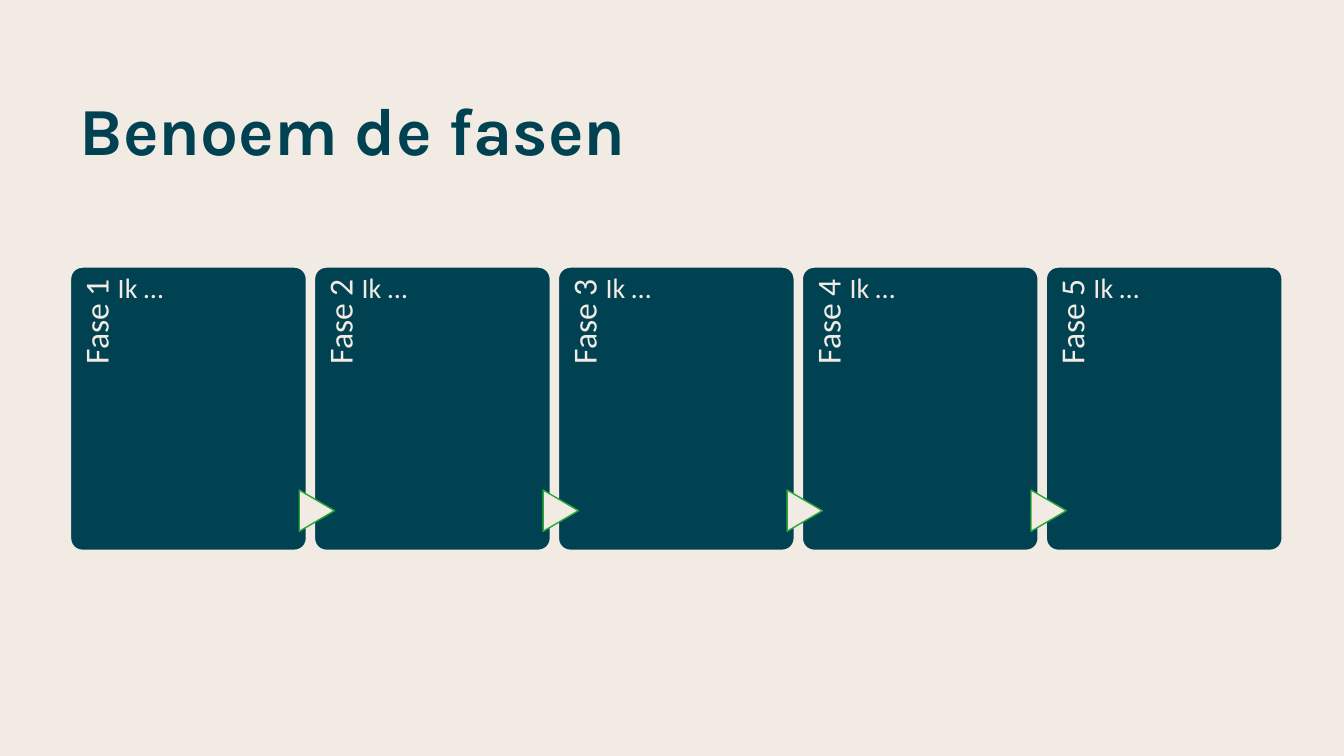
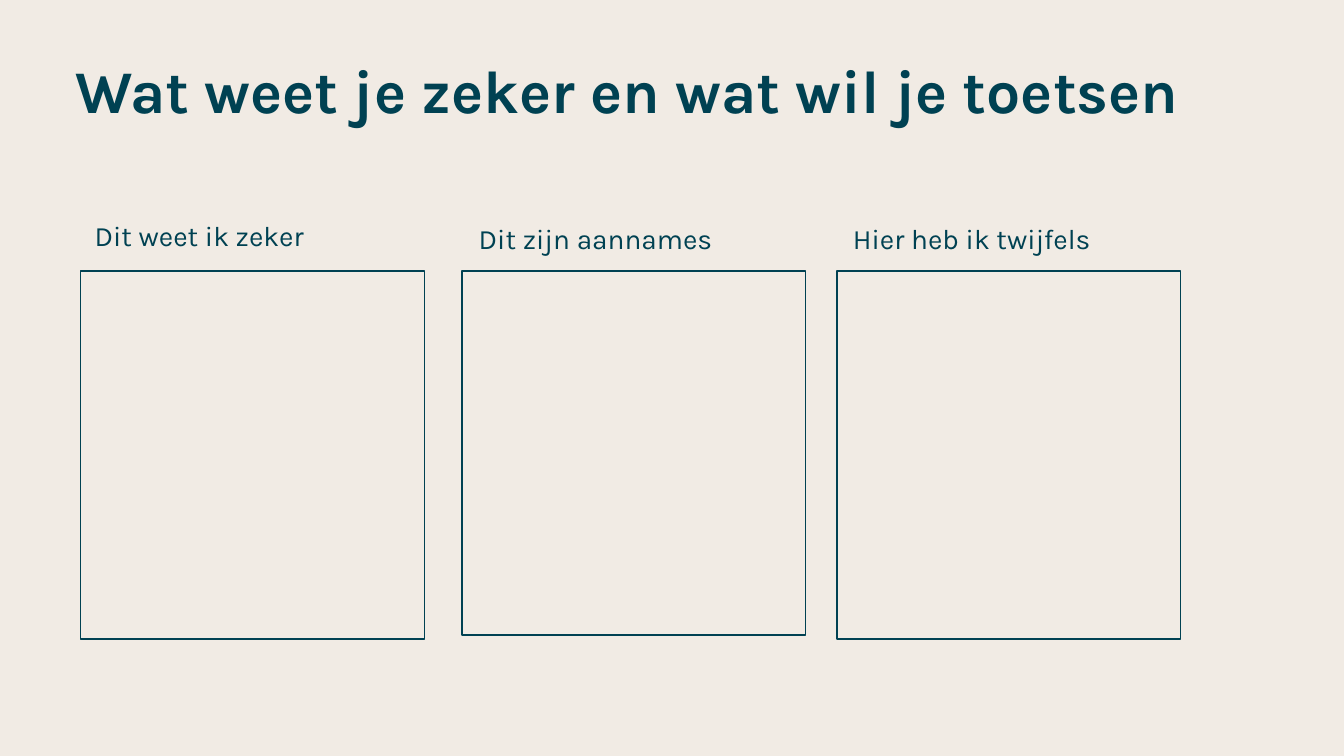
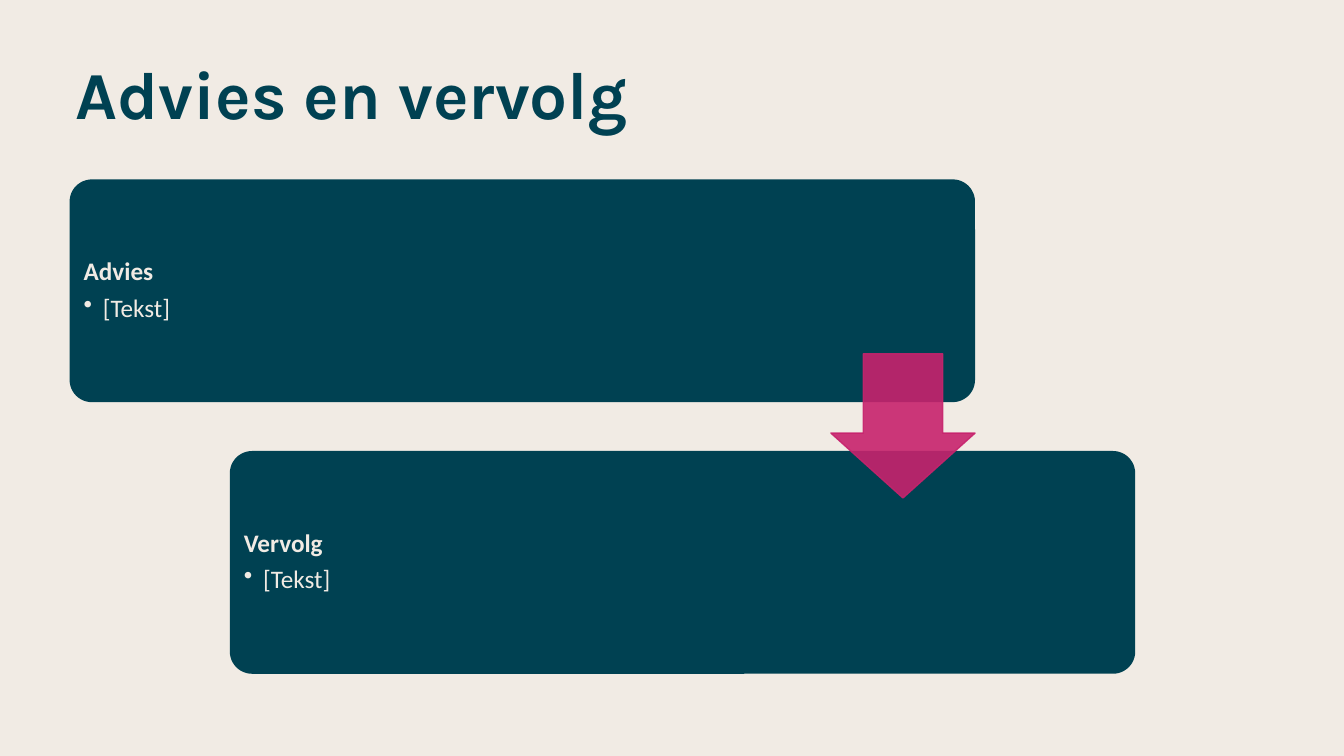
from typing import NamedTuple

from lxml import etree
from pptx import Presentation
from pptx import util as u
from pptx.dml.color import RGBColor
from pptx.enum import shapes, text
from pptx.oxml import ns

# Shared look
CREAM = RGBColor(0xF1, 0xEB, 0xE4)
TEAL = RGBColor(0x00, 0x41, 0x52)
GREEN = RGBColor(0x27, 0xA7, 0x36)
PINK = RGBColor(0xC7, 0x23, 0x6D)
HEADING_FONT, BODY_FONT = "Karla", "Calibri"
PAGE_WIDTH, PAGE_HEIGHT = u.Inches(13.33), u.Inches(7.5)

TITLE = {"name": HEADING_FONT, "size": u.Pt(48), "bold": True, "color": TEAL}
CAPTION = {"name": HEADING_FONT, "size": u.Pt(20), "color": TEAL}
PHASE = {"name": BODY_FONT, "size": u.Pt(24), "color": CREAM}
ENTRY = {**PHASE, "size": u.Pt(20)}
POINT = {**PHASE, "size": u.Pt(18)}
TIGHT = {"line_spacing": 0.9}


class Area(NamedTuple):
    left: int
    top: int
    width: int
    height: int


PAGE = Area(0, 0, PAGE_WIDTH, PAGE_HEIGHT)


def portion(area, left, top, width, height):
    """Return a portion of an area, given as shares of its size."""
    return Area(round(area.left + left * area.width),
                round(area.top + top * area.height),
                round(width * area.width), round(height * area.height))


def percent(left, top, width, height):
    return portion(PAGE, left / 100, top / 100, width / 100, height / 100)


def centred(x, y, width, height):
    return Area(round(x - width / 2), round(y - height / 2), width, height)


# Kinds of element
def set_all(target, values):
    for name, value in values.items():
        setattr(target, name, value)


def add_span(para, wording, style):
    span = para.add_run()
    span.text = wording
    for name, value in style.items():
        if name == "color":
            span.font.color.rgb = value
        else:
            setattr(span.font, name, value)


def add_bullet(para):
    properties = para._p.get_or_add_pPr()
    indent = u.Inches(0.19)
    properties.set("marL", str(indent))
    properties.set("indent", str(-indent))
    etree.SubElement(properties, ns.qn("a:buChar")).set("char", "•")


def add_text(page, area, wording, style, layout=None, insets=None, **frame):
    box = page.shapes.add_textbox(*area)
    set_all(box.text_frame, {"word_wrap": True, **frame})
    if insets:
        sides = ("margin_left", "margin_top", "margin_right", "margin_bottom")
        set_all(box.text_frame, dict(zip(sides, map(u.Inches, insets))))
    para = box.text_frame.paragraphs[0]
    set_all(para, layout or {})
    add_span(para, wording, style)
    return box


def add_figure(page, kind, area, fill, line=None, adjustments=(), rotation=0):
    figure = page.shapes.add_shape(kind, *area)
    figure.shadow.inherit = False
    figure.rotation = rotation
    figure.fill.solid()
    figure.fill.fore_color.rgb = fill
    if line is None:
        figure.line.fill.background()
    else:
        figure.line.color.rgb = line
        figure.line.width = u.Pt(1)
    for index, value in enumerate(adjustments):
        figure.adjustments[index] = value
    return figure


def set_opacity(figure, share):
    for color in figure._element.spPr.iter(ns.qn("a:srgbClr")):
        etree.SubElement(color, ns.qn("a:alpha")).set("val", str(share * 1000))


def add_page(deck, title, left, top, size=48):
    page = deck.slides.add_slide(deck.slide_layouts[6])
    add_text(page, percent(left, top, 87.17, 18.4), title,
             {**TITLE, "size": u.Pt(size)}, TIGHT)
    return page


def add_phase(page, number, card):
    add_figure(page, shapes.MSO_SHAPE.ROUNDED_RECTANGLE, card, TEAL, CREAM, [0.05])
    # Upright label along the left edge
    strip = portion(card, 0, 0, 0.2, 0.82)
    label = centred(strip.left + strip.width / 2, strip.top + strip.height / 2,
                    strip.height, strip.width)
    box = add_text(page, label, f"Fase {number}", PHASE,
                   {**TIGHT, "alignment": text.PP_ALIGN.RIGHT}, (0, 0.09, 0.12, 0))
    box.rotation = 270
    # Pointer from the phase before
    if number > 1:
        pointer = centred(card.left + 0.01 * card.width,
                          card.top + 0.86 * card.height,
                          u.Inches(0.41), u.Inches(0.35))
        add_figure(page, shapes.MSO_SHAPE.FLOWCHART_EXTRACT, pointer,
                   CREAM, GREEN, rotation=90)
    add_text(page, portion(card, 0.2, 0, 0.74, 1), "Ik …", ENTRY, TIGHT,
             (0, 0.07, 0, 0))


def add_step(page, heading, card):
    add_figure(page, shapes.MSO_SHAPE.ROUNDED_RECTANGLE, card, TEAL, adjustments=[0.1])
    box = add_text(page, portion(card, 0.01, 0.03, 0.74, 0.94), heading,
                   {**POINT, "bold": True}, {**TIGHT, "space_after": u.Pt(6.3)},
                   [0.05, 0.07, 0.07, 0.07], vertical_anchor=text.MSO_ANCHOR.MIDDLE)
    para = box.text_frame.add_paragraph()
    add_bullet(para)
    set_all(para, {**TIGHT, "level": 1, "space_after": u.Pt(2.7)})
    add_span(para, "[Tekst]", POINT)


# Slides
def build_phases(deck):
    page = add_page(deck, "Benoem de fasen", 5.18, 12.27)
    for index in range(5):
        add_phase(page, index + 1, percent(5.25 + index * 18.15, 35.33, 17.55, 37.47))


def build_certainty(deck):
    page = add_page(deck, "Wat weet je zeker en wat wil je toetsen", 4.88, 7.47, 43.2)
    columns = [
        # caption, caption left, top and width, panel left and height
        ("Dit weet ik zeker", 6.3, 28.27, 19.43, 6, 48.67),
        ("Dit zijn aannames", 34.88, 28.67, 19.43, 34.36, 48.13),
        ("Hier heb ik twijfels", 62.72, 28.67, 20.4, 62.27, 48.67),
    ]
    for caption, left, top, width, panel_left, panel_height in columns:
        add_text(page, percent(left, top, width, 5.87), caption, CAPTION,
                 auto_size=text.MSO_AUTO_SIZE.SHAPE_TO_FIT_TEXT)
        add_figure(page, shapes.MSO_SHAPE.RECTANGLE,
                   percent(panel_left, 35.87, 25.58, panel_height), CREAM, TEAL)


def build_advice(deck):
    page = add_page(deck, "Advies en vervolg", 4.88, 7.47)
    for index, heading in enumerate(("Advies", "Vervolg")):
        add_step(page, heading,
                 percent(5.18 + index * 11.92, 23.73 + index * 35.93, 67.37, 29.47))
    arrow = add_figure(page, shapes.MSO_SHAPE.DOWN_ARROW,
                       percent(61.82, 46.8, 10.73, 19.07), PINK, PINK, [0.55, 0.45])
    set_opacity(arrow, 90)


def main():
    deck = Presentation()
    set_all(deck, {"slide_width": PAGE_WIDTH, "slide_height": PAGE_HEIGHT})
    backdrop = deck.slide_master.background.fill
    backdrop.solid()
    backdrop.fore_color.rgb = CREAM
    build_phases(deck)
    build_certainty(deck)
    build_advice(deck)
    deck.save("out.pptx")


if __name__ == "__main__":
    main()
